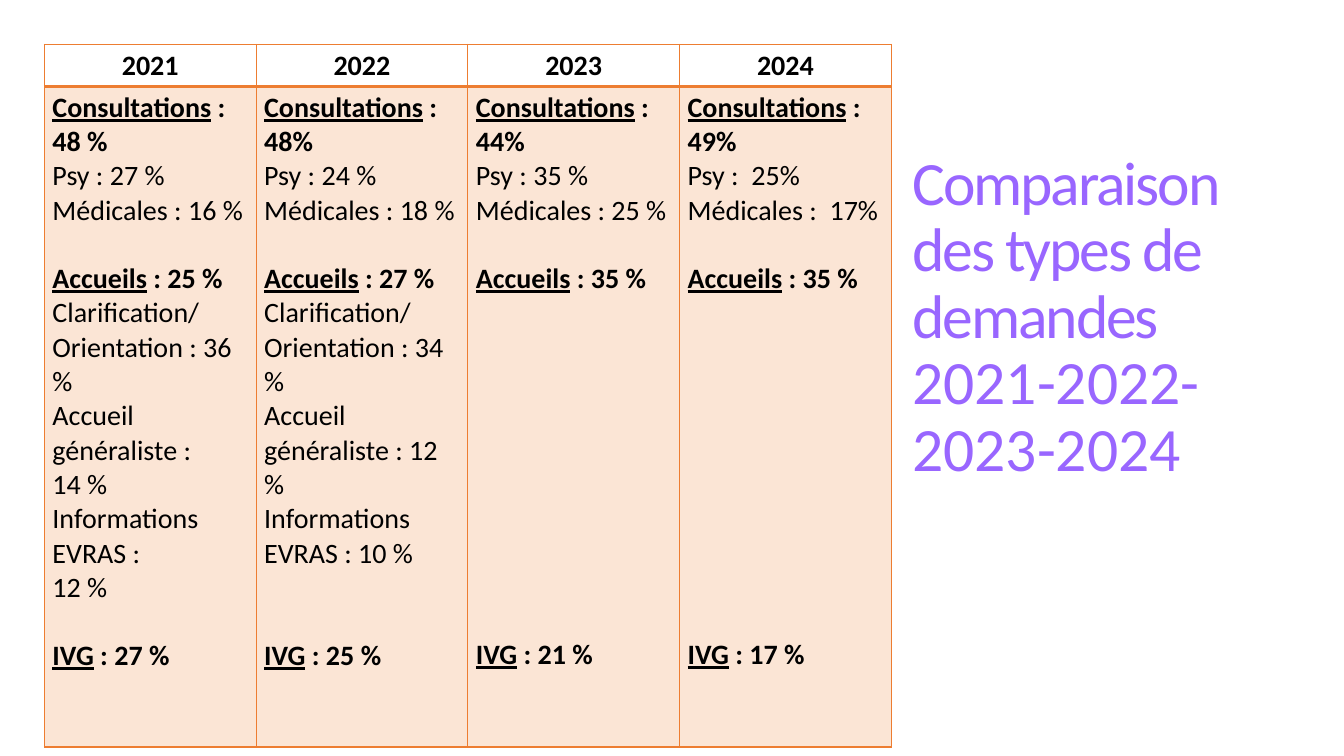
from dataclasses import dataclass

import lxml.etree
import pptx
import pptx.dml.color
import pptx.enum.text
import pptx.oxml.ns
import pptx.util

EMU_PER_PX = 9144


@dataclass(frozen=True)
class Theme:
    font: str = "Calibri"
    title_color: str = "9966FF"
    text_color: str = "000000"
    accent: str = "ED7D31"
    tint_percent: int = 20
    title_size: int = 44
    table_size: int = 20
    line_height: float = 24.4
    thin: int = 1
    thick: int = 2


@dataclass(frozen=True)
class Section:
    heading: str
    bold_lines: tuple
    plain_lines: tuple = ()
    gap_lines: int = 0


THEME = Theme()

YEARS = {
    "2021": (
        Section("Consultations", (" :", "48 %"), ("Psy : 27 %", "Médicales : 16 %")),
        Section("Accueils", (" : 25 %",),
                ("Clarification/", "Orientation : 36 %", "Accueil généraliste :", "14 %",
                 "Informations EVRAS :", "12 %"), 1),
        Section("IVG", (" : 27 %",), gap_lines=1),
    ),
    "2022": (
        Section("Consultations", (" :", "48%"), ("Psy : 24 %", "Médicales : 18 %")),
        Section("Accueils", (" : 27 %",),
                ("Clarification/", "Orientation : 34 %", "Accueil généraliste : 12 %",
                 "Informations EVRAS : 10 %"), 1),
        Section("IVG", (" : 25 %",), gap_lines=2),
    ),
    "2023": (
        Section("Consultations", (" :", "44%"), ("Psy : 35 %", "Médicales : 25 %")),
        Section("Accueils", (" : 35 %",), gap_lines=1),
        Section("IVG", (" : 21 %",), gap_lines=10),
    ),
    "2024": (
        Section("Consultations", (" :", "49%"), ("Psy :  25%", "Médicales :  17%")),
        Section("Accueils", (" : 35 %",), gap_lines=1),
        Section("IVG", (" : 17 %",), gap_lines=10),
    ),
}


def px(length):
    return pptx.util.Emu(length * EMU_PER_PX)


def add_run(paragraph, text, size, color, bold=False, underline=False):
    run = paragraph.add_run()
    run.text = text
    run.font.name = THEME.font
    run.font.size = pptx.util.Pt(size)
    run.font.color.rgb = pptx.dml.color.RGBColor.from_string(color)
    run.font.bold = bold
    run.font.underline = underline
    return run


def add_table_run(paragraph, text, bold=False, underline=False):
    add_run(paragraph, text, THEME.table_size, THEME.text_color, bold, underline)


def add_element(parent, tag, **attributes):
    return lxml.etree.SubElement(parent, pptx.oxml.ns.qn(tag), attributes)


def set_borders(cell, top, bottom):
    properties = cell._tc.get_or_add_tcPr()
    widths = {"L": THEME.thin, "R": THEME.thin, "T": top, "B": bottom}
    for side, width in widths.items():
        line = add_element(properties, f"a:ln{side}", w=str(pptx.util.Pt(width)))
        add_element(add_element(line, "a:solidFill"), "a:srgbClr", val=THEME.accent)


def format_cell(cell):
    cell.margin_left = cell.margin_right = px(8)
    cell.margin_top = cell.margin_bottom = px(4)


def fill_header(cell, year):
    format_cell(cell)
    set_borders(cell, THEME.thin, THEME.thick)
    cell.fill.background()
    cell.vertical_anchor = pptx.enum.text.MSO_ANCHOR.MIDDLE
    paragraph = cell.text_frame.paragraphs[0]
    paragraph.alignment = pptx.enum.text.PP_ALIGN.CENTER
    add_table_run(paragraph, year, bold=True)


def fill_body(cell, sections):
    format_cell(cell)
    set_borders(cell, THEME.thick, THEME.thin)
    cell.fill.solid()
    cell.fill.fore_color.rgb = pptx.dml.color.RGBColor.from_string(THEME.accent)
    color = cell._tc.tcPr.find(pptx.oxml.ns.qn("a:solidFill"))[0]
    add_element(color, "a:alpha", val=str(THEME.tint_percent * 1000))
    frame = cell.text_frame
    for index, section in enumerate(sections):
        paragraph = frame.add_paragraph() if index else frame.paragraphs[0]
        if section.gap_lines:
            paragraph.space_before = pptx.util.Pt(section.gap_lines * THEME.line_height)
        add_table_run(paragraph, section.heading, bold=True, underline=True)
        add_table_run(paragraph, section.bold_lines[0], bold=True)
        for line in section.bold_lines[1:]:
            add_table_run(frame.add_paragraph(), line, bold=True)
        for line in section.plain_lines:
            add_table_run(frame.add_paragraph(), line)


def add_comparison_table(slide, left, top, width, height, header_height):
    shape = slide.shapes.add_table(2, len(YEARS), px(left), px(top), px(width), px(height))
    table = shape.table
    table.first_row = table.horz_banding = False
    table.rows[0].height = px(header_height)
    table.rows[1].height = px(height - header_height)
    for index, (year, sections) in enumerate(YEARS.items()):
        table.columns[index].width = px(width // len(YEARS))
        fill_header(table.cell(0, index), year)
        fill_body(table.cell(1, index), sections)


def add_title(slide, left, top, width, height):
    frame = slide.shapes.add_textbox(px(left), px(top), px(width), px(height)).text_frame
    frame.word_wrap = True
    frame.vertical_anchor = pptx.enum.text.MSO_ANCHOR.MIDDLE
    paragraph = frame.paragraphs[0]
    paragraph.line_spacing = 0.9
    subject = add_run(paragraph, "Comparaison des types de demandes ",
                      THEME.title_size, THEME.title_color)
    subject.font._element.set("spc", "-150")
    paragraph.add_line_break()
    add_run(paragraph, "2021-2022-2023-2024", THEME.title_size, THEME.title_color)


def main():
    presentation = pptx.Presentation()
    presentation.slide_width = px(1333)
    presentation.slide_height = px(750)
    slide = presentation.slides.add_slide(presentation.slide_layouts[6])
    add_title(slide, 895, 44, 394, 544)
    add_comparison_table(slide, 44, 44, 840, 697, 42)
    presentation.save("out.pptx")


if __name__ == "__main__":
    main()
